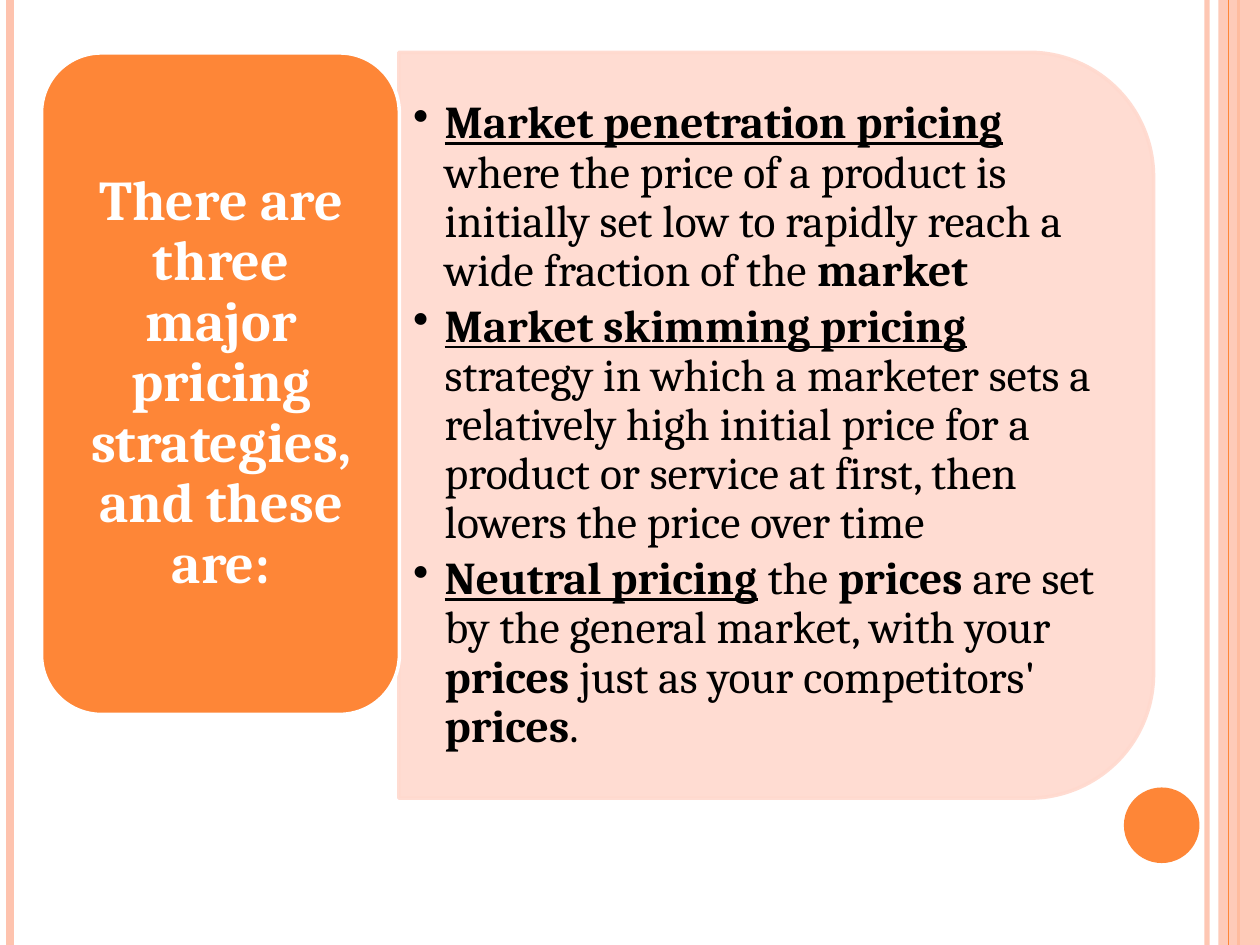
from dataclasses import dataclass

from lxml import etree
from pptx import Presentation
from pptx.dml.color import RGBColor
from pptx.enum.shapes import MSO_CONNECTOR, MSO_SHAPE
from pptx.enum.text import MSO_ANCHOR, PP_ALIGN
from pptx.oxml.ns import qn
from pptx.util import Inches, Pt

STRAIGHT = MSO_CONNECTOR.STRAIGHT
RECTANGLE, OVAL = MSO_SHAPE.RECTANGLE, MSO_SHAPE.OVAL
ROUNDED = MSO_SHAPE.ROUNDED_RECTANGLE
ROUND_TOP = MSO_SHAPE.ROUND_2_SAME_RECTANGLE
MIDDLE = MSO_ANCHOR.MIDDLE
LEFT, CENTER = PP_ALIGN.LEFT, PP_ALIGN.CENTER

ORANGE = RGBColor(0xFE, 0x86, 0x37)
PEACH = RGBColor(0xFE, 0xC3, 0xAE)
PALE_PEACH = RGBColor(0xFF, 0xD9, 0xCE)
WHITE = RGBColor(0xFF, 0xFF, 0xFF)
BLACK = RGBColor(0, 0, 0)
FONT = "Cambria"
SLIDE_WIDTH, SLIDE_HEIGHT = 10, 7.5


@dataclass
class Box:
    left: float
    top: float
    width: float
    height: float

    def lengths(self) -> list:
        return [Inches(v) for v in (self.left, self.top, self.width, self.height)]


@dataclass
class Stripe:
    x: float
    color: RGBColor
    weight: float
    opacity: int = 100


@dataclass
class Phrase:
    text: str
    bold: bool = False
    underline: bool = False


@dataclass
class TextStyle:
    size: float
    color: RGBColor
    align: PP_ALIGN
    space_after: float
    inset_x: float
    inset_y: float
    bulleted: bool = False


def paint(fill, color: RGBColor, opacity: int = 100) -> None:
    fill.solid()
    fill.fore_color.rgb = color
    if opacity < 100:
        srgb = fill._xPr.find(qn("a:solidFill")).find(qn("a:srgbClr"))
        etree.SubElement(srgb, qn("a:alpha"), val=str(opacity * 1000))


def add_stripe(slide, stripe: Stripe) -> None:
    x = Inches(stripe.x)
    line = slide.shapes.add_connector(STRAIGHT, x, 0, x, Inches(SLIDE_HEIGHT))
    line.line.width = Pt(stripe.weight)
    paint(line.line.fill, stripe.color, stripe.opacity)
    etree.SubElement(line._element.spPr, qn("a:effectLst"))


def add_block(slide, preset, box: Box, color: RGBColor, opacity: int = 100,
              outline: RGBColor | None = None):
    block = slide.shapes.add_shape(preset, *box.lengths())
    block.shadow.inherit = False
    paint(block.fill, color, opacity)
    if outline is None:
        block.line.fill.background()
    else:
        block.line.width = Pt(2)
        paint(block.line.fill, outline, opacity)
    return block


def add_bullet(paragraph) -> None:
    properties = paragraph._p.get_or_add_pPr()
    properties.set("marL", str(Inches(0.25)))
    properties.set("indent", str(Inches(-0.25)))
    etree.SubElement(properties, qn("a:buChar"), char="•")


def add_text(slide, box: Box, paragraphs: list[list[Phrase]], style: TextStyle) -> None:
    frame = slide.shapes.add_textbox(*box.lengths()).text_frame
    frame.word_wrap = True
    frame.vertical_anchor = MIDDLE
    frame.margin_left = frame.margin_right = Inches(style.inset_x)
    frame.margin_top = frame.margin_bottom = Inches(style.inset_y)
    for index, phrases in enumerate(paragraphs):
        paragraph = frame.add_paragraph() if index else frame.paragraphs[0]
        if style.bulleted:
            add_bullet(paragraph)
        paragraph.alignment = style.align
        paragraph.line_spacing = 0.9
        paragraph.space_after = Pt(style.space_after)
        for phrase in phrases:
            run = paragraph.add_run()
            run.text = phrase.text
            run.font.name = FONT
            run.font.size = Pt(style.size)
            run.font.color.rgb = style.color
            run.font.bold = phrase.bold
            run.font.underline = phrase.underline


HEADING = [[Phrase("There are three major pricing strategies, and these are:", bold=True)]]
HEADING_STYLE = TextStyle(32, WHITE, CENTER, 11, 0.13, 0.07)

STRATEGIES = [
    [
        Phrase("Market penetration pricing ", bold=True, underline=True),
        Phrase("where the price of a product is initially set low to rapidly "
               "reach a wide fraction of the "),
        Phrase("market", bold=True),
    ],
    [
        Phrase("Market skimming pricing ", bold=True, underline=True),
        Phrase("strategy in which a marketer sets a relatively high initial price "
               "for a product or service at first, then lowers the price over time"),
    ],
    [
        Phrase("Neutral pricing", bold=True, underline=True),
        Phrase(" the "),
        Phrase("prices", bold=True),
        Phrase(" are set by the general market, with your "),
        Phrase("prices ", bold=True),
        Phrase("just as your competitors' "),
        Phrase("prices", bold=True),
        Phrase("."),
    ],
]
STRATEGY_STYLE = TextStyle(26, BLACK, LEFT, 4, 0.11, 0.05, bulleted=True)


def main() -> None:
    deck = Presentation()
    deck.slide_width, deck.slide_height = Inches(SLIDE_WIDTH), Inches(SLIDE_HEIGHT)
    slide = deck.slides.add_slide(deck.slide_layouts[6])
    paint(slide.background.fill, WHITE)

    # Edge decoration
    for stripe in (Stripe(9.58, PEACH, 3, 93), Stripe(0.08, PEACH, 4.5),
                   Stripe(9.83, ORANGE, 1.5)):
        add_stripe(slide, stripe)
    add_block(slide, RECTANGLE, Box(9.67, 0, 0.33, SLIDE_HEIGHT), PEACH, 87)
    add_stripe(slide, Stripe(9.75, ORANGE, 0.75))
    add_block(slide, OVAL, Box(8.92, 6.25, 0.6, 0.6), ORANGE)

    # Strategies panel, turned so its round corners face right
    panel = add_block(slide, ROUND_TOP, Box(3.2, 0.38, 5.92, 5.99),
                      PALE_PEACH, 90, PALE_PEACH)
    panel.rotation = 90
    add_text(slide, Box(3.17, 0.71, 5.7, 5.34), STRATEGIES, STRATEGY_STYLE)

    # Heading card
    add_block(slide, ROUNDED, Box(0.33, 0.42, 2.84, 5.25), ORANGE, outline=WHITE)
    add_text(slide, Box(0.47, 0.56, 2.57, 4.97), HEADING, HEADING_STYLE)

    deck.save("out.pptx")


if __name__ == "__main__":
    main()
